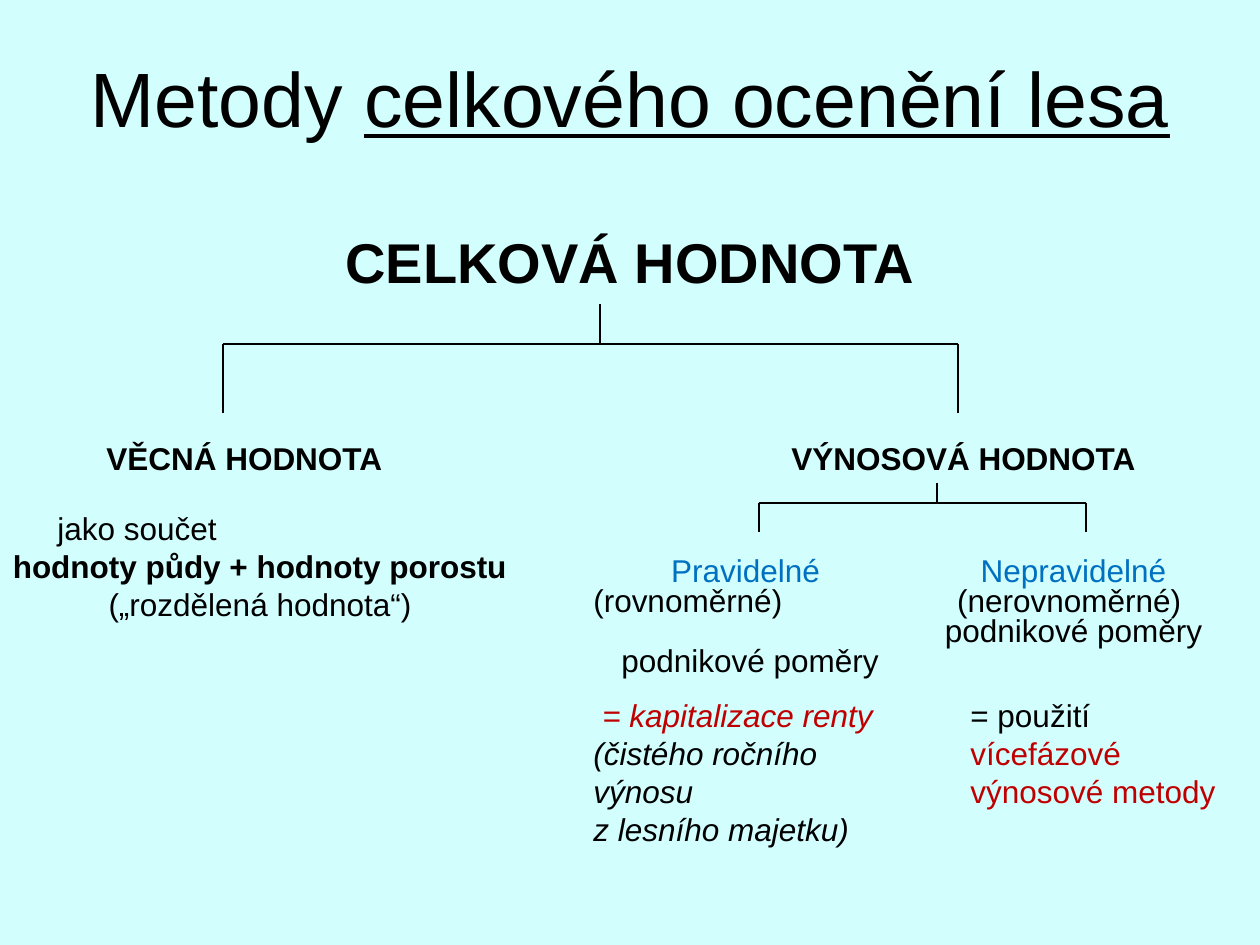
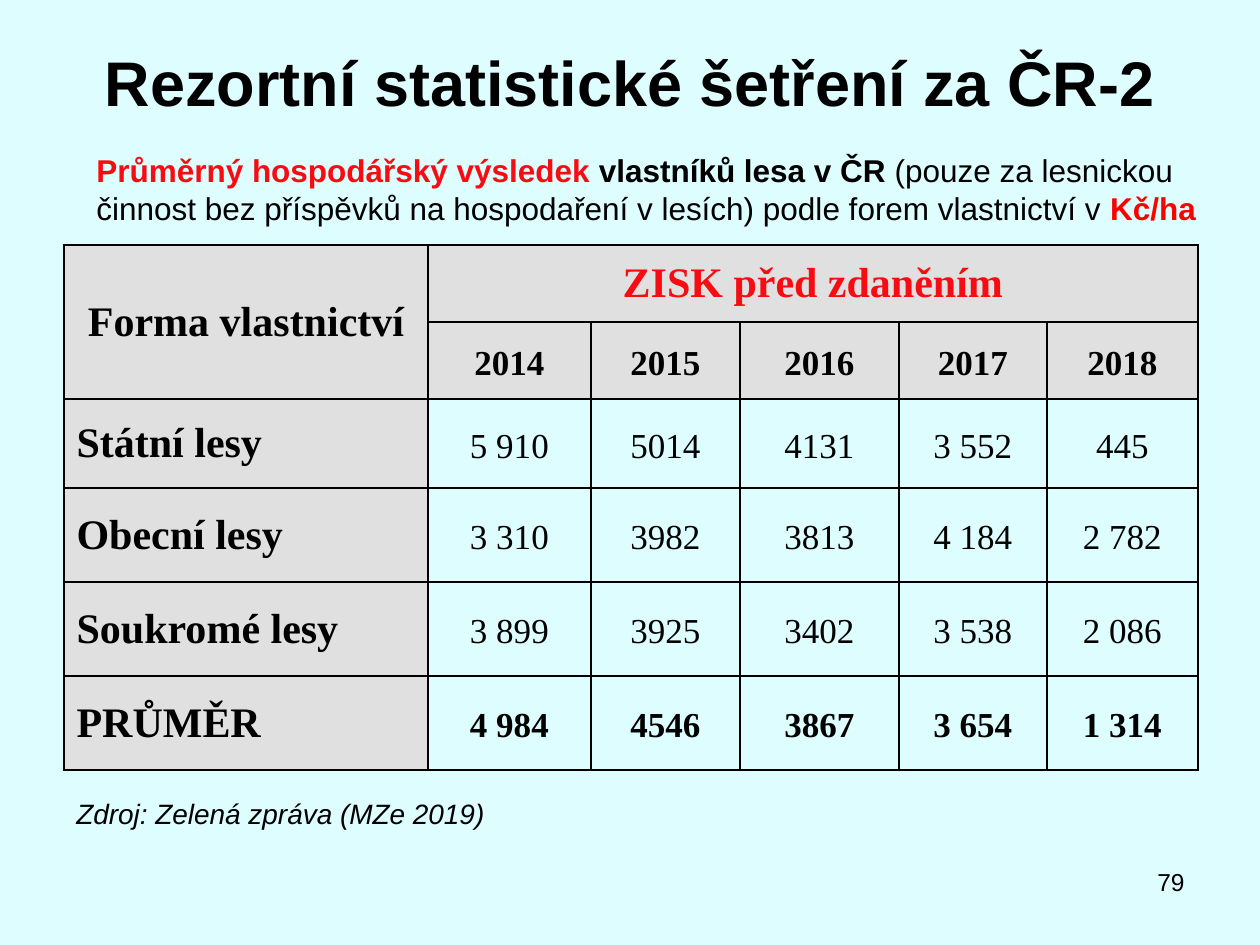
from lxml import etree
from pptx import Presentation
from pptx.dml.color import RGBColor
from pptx.enum.shapes import MSO_CONNECTOR
from pptx.enum.text import MSO_ANCHOR as ANCHOR, PP_ALIGN as ALIGN
from pptx.oxml.ns import qn
from pptx.util import Emu, Pt

PX = 914400 / 126
BLACK, RED, DARK_RED, BLUE, GREY = "000000", "F80C12", "C00000", "0070C0", "E0E0E0"


def px(length):
    return Emu(round(length * PX))


def color(hex_string):
    return RGBColor.from_string(hex_string)


def style_font(font, name=None, size=None, fill=None, **flags):
    if name:
        font.name = name
    if size:
        font.size = Pt(size)
    if fill:
        font.color.rgb = color(fill)
    for flag, value in flags.items():
        setattr(font, flag, value)


class Deck:
    """Holds the shared style and the current slide."""

    sans, serif = "Arial", "Times New Roman"
    title_left, title_top, title_width = 63, 38, 1134

    def __init__(self):
        self.presentation = Presentation()
        self.presentation.slide_width = px(1260)
        self.presentation.slide_height = px(945)
        self.slide = None

    def new_slide(self, background):
        layout = self.presentation.slide_layouts[6]
        self.slide = self.presentation.slides.add_slide(layout)
        fill = self.slide.background.fill
        fill.solid()
        fill.fore_color.rgb = color(background)

    def paragraph(self, paragraph, content, align=ALIGN.LEFT, indent=0,
                  spacing=None, before=None, name=None, size=18, fill=BLACK, **flags):
        """Content is a string or a list of (string, differing style) pairs."""
        paragraph.alignment = align
        if spacing:
            paragraph.line_spacing = spacing
        if before:
            paragraph.space_before = Pt(before)
        if indent:
            paragraph._p.get_or_add_pPr().set("marL", str(px(indent)))
        style_font(paragraph.font, name or self.sans, size, fill, **flags)
        runs = [(content, {})] if isinstance(content, str) else content
        for string, difference in runs:
            run = paragraph.add_run()
            run.text = string
            style_font(run.font, **difference)

    def text(self, left, top, width, height, *paragraphs, anchor=ANCHOR.TOP, **common):
        """Each paragraph is a (content, own style) pair."""
        shape = self.slide.shapes.add_textbox(px(left), px(top), px(width), px(height))
        frame = shape.text_frame
        frame.word_wrap = True
        frame.vertical_anchor = anchor
        for index, (content, own) in enumerate(paragraphs):
            target = frame.add_paragraph() if index else frame.paragraphs[0]
            self.paragraph(target, content, **{**common, **own})

    def title(self, content, height, **style):
        self.text(self.title_left, self.title_top, self.title_width, height,
                  (content, style), anchor=ANCHOR.MIDDLE, align=ALIGN.CENTER)

    def line(self, x1, y1, x2, y2):
        connector = self.slide.shapes.add_connector(
            MSO_CONNECTOR.STRAIGHT, px(x1), px(y1), px(x2), px(y2))
        connector.line.color.rgb = color(BLACK)
        connector.line.width = Pt(0.75)
        etree.SubElement(connector._element.spPr, qn("a:effectLst"))

    def fork(self, stem, top, bar, bottom, left, right):
        self.line(stem, top, stem, bar)
        self.line(left, bar, right, bar)
        for x in (left, right):
            self.line(x, bar, x, bottom)

    def table(self, left, top, columns, rows):
        frame = self.slide.shapes.add_table(
            len(rows), len(columns), px(left), px(top), px(sum(columns)), px(sum(rows)))
        table = frame.table
        table.first_row = table.horz_banding = False
        for column, width in zip(table.columns, columns):
            column.width = px(width)
        for row, height in zip(table.rows, rows):
            row.height = px(height)
        return table

    def cell(self, cell, content, fill=None, number=False, **style):
        cell.vertical_anchor = ANCHOR.MIDDLE
        if number:
            cell.margin_left = cell.margin_right = px(9)
            cell.margin_top = cell.margin_bottom = 0
            style = dict(align=ALIGN.CENTER, spacing=1.15, size=20) | style
        if fill:
            cell.fill.solid()
            cell.fill.fore_color.rgb = color(fill)
        else:
            cell.fill.background()
        if content:
            self.paragraph(cell.text_frame.paragraphs[0], content,
                           **{"name": self.serif, "size": 24, **style})
        self.borders(cell)

    def borders(self, cell):
        properties = cell._tc.get_or_add_tcPr()
        for index, side in enumerate(("lnL", "lnR", "lnT", "lnB")):
            line = etree.Element(qn(f"a:{side}"), w=str(Pt(1)))
            solid = etree.SubElement(line, qn("a:solidFill"))
            etree.SubElement(solid, qn("a:srgbClr"), val=BLACK)
            properties.insert(index, line)


def build_methods(deck):
    deck.new_slide("D2FEFE")
    deck.title([("Metody ", {}), ("celkového ocenění lesa", {"underline": True})],
               117, size=44)

    # Tree of values
    deck.text(63, 221, 1134, 80,
              ("CELKOVÁ HODNOTA", dict(align=ALIGN.CENTER, size=32, bold=True)))
    deck.fork(600, 304, 344, 413, 223, 958)
    for left, width, heading in ((94, 323, "VĚCNÁ HODNOTA"), (779, 397, "VÝNOSOVÁ HODNOTA")):
        deck.text(left, 433, width, 50, (heading, {"bold": True}))
    deck.fork(937, 483, 503, 532, 759, 1086)

    # Material value
    deck.text(0, 503, 520, 126,
              ("jako součet", dict(align=ALIGN.LEFT, indent=45)),
              ("hodnoty půdy + hodnoty porostu", {"bold": True}),
              ("(„rozdělená hodnota“)", {}), align=ALIGN.CENTER)

    # Yield value: regular and irregular conditions
    conditions = "podnikové poměry"
    deck.text(581, 552, 338, 105,
              ("Pravidelné ", {"fill": BLUE}),
              ("(rovnoměrné)", {"align": ALIGN.LEFT}),
              (conditions, {"before": 17}), align=ALIGN.CENTER, spacing=0.8)
    deck.text(907, 552, 333, 105,
              ([("Nepravidelné ", {"fill": BLUE}), ("(nerovnoměrné) ", {})], {}),
              (conditions, {}), align=ALIGN.CENTER, spacing=0.8)
    deck.text(581, 690, 338, 165,
              ("= kapitalizace renty", dict(fill=DARK_RED, indent=9)),
              ("(čistého ročního výnosu", {}),
              ("z lesního majetku)", {}), italic=True)
    deck.text(958, 690, 287, 127,
              ([("= použití ", {}), ("vícefázové výnosové metody", {"fill": DARK_RED})], {}))


def build_survey(deck):
    deck.new_slide("DDFDFF")
    deck.title("Rezortní statistické šetření za ČR-2", 87, size=36, bold=True)
    deck.text(84, 145, 1131, 89, ([
        ("Průměrný hospodářský výsledek", dict(fill=RED, bold=True)),
        (" vlastníků lesa v ČR", {"bold": True}),
        (" (pouze za lesnickou činnost bez příspěvků na hospodaření v lesích)"
         " podle forem vlastnictví v ", {}),
        ("Kč/ha", dict(fill="FF0000", bold=True))], {}))

    # Profit table
    years = ["2014", "2015", "2016", "2017", "2018"]
    profits = {
        "Státní lesy": ["5 910", "5014", "4131", "3 552", "445"],
        "Obecní lesy": ["3 310", "3982", "3813", "4 184", "2 782"],
        "Soukromé lesy": ["3 899", "3925", "3402", "3 538", "2 086"],
        "PRŮMĚR": ["4 984", "4546", "3867", "3 654", "1 314"],
    }
    table = deck.table(64, 245, [364, 163, 149, 159, 148, 151], [77, 77, 89, 94, 94, 94])
    header = dict(fill=GREY, bold=True)
    grid = [["Forma vlastnictví", "ZISK před zdaněním", "", "", "", ""], ["", *years]]
    grid += [[owner, *values] for owner, values in profits.items()]
    for r, row in enumerate(grid):
        for c, content in enumerate(row):
            target = table.cell(r, c)
            if r == 0:
                deck.cell(target, [(content, {"fill": RED if c else BLACK})] if content else "",
                          align=ALIGN.CENTER, **header)
            elif c == 0:
                deck.cell(target, content, **header)
            else:
                deck.cell(target, content, GREY if r == 1 else None, number=True,
                          bold=r in (1, len(grid) - 1))
    table.cell(0, 0).merge(table.cell(1, 0))
    table.cell(0, 1).merge(table.cell(0, len(years)))

    # Source and page number
    deck.text(64, 790, 446, 47, ("Zdroj: Zelená zpráva (MZe 2019)", dict(size=16, italic=True)))
    deck.text(903, 861, 294, 66, ("79", dict(size=14, align=ALIGN.RIGHT)))


def main():
    deck = Deck()
    build_methods(deck)
    build_survey(deck)
    deck.presentation.save("out.pptx")


if __name__ == "__main__":
    main()
